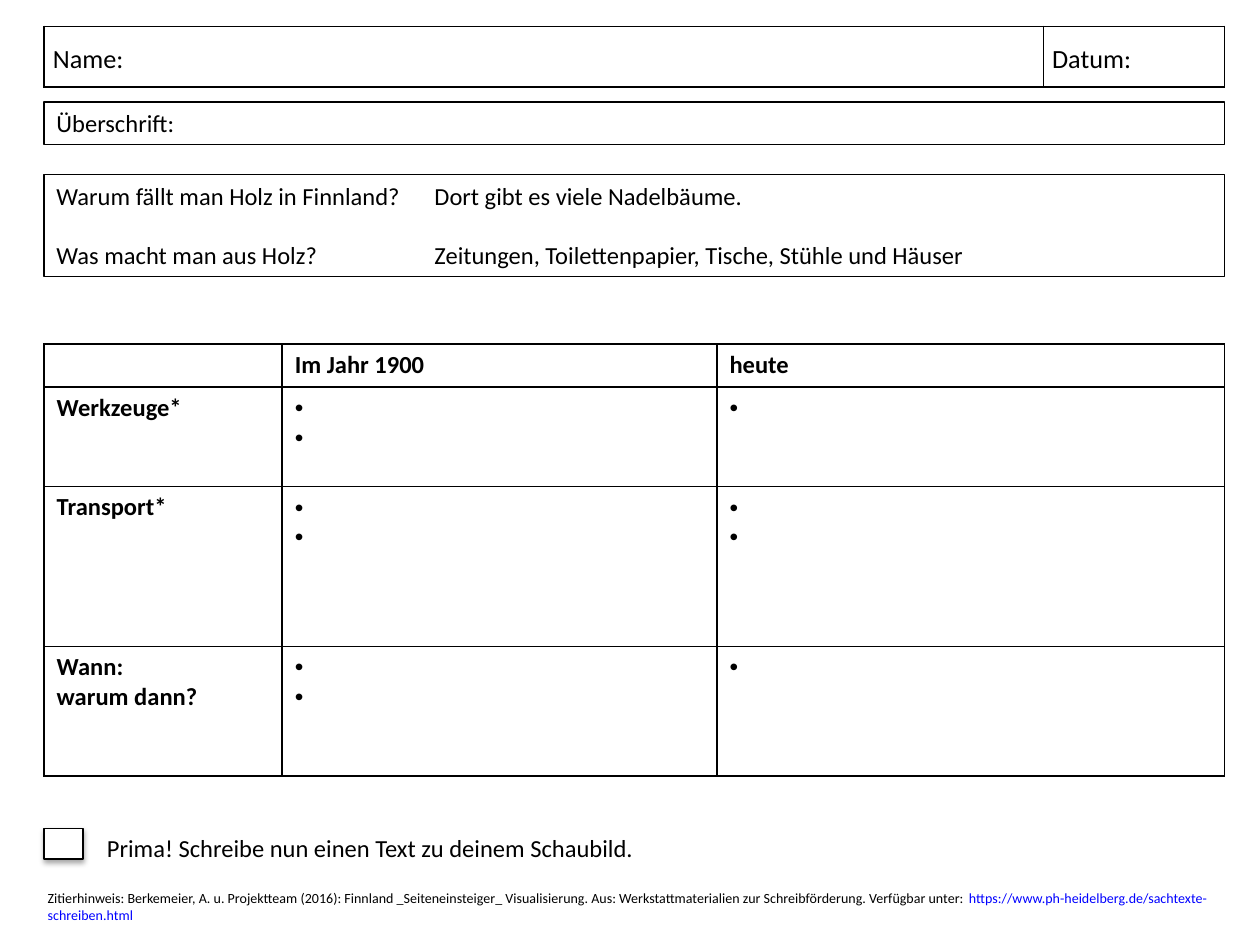
from lxml.etree import SubElement
from pptx import Presentation
from pptx.dml.color import RGBColor
from pptx.enum.shapes import MSO_SHAPE
from pptx.enum.text import MSO_ANCHOR, PP_ALIGN
from pptx.oxml.ns import qn
from pptx.util import Inches, Pt

SLIDE_WIDTH, SLIDE_HEIGHT = Inches(10), Inches(7.5)
BLACK, WHITE, BLUE = "000000", "FFFFFF", "0000FF"
LEFT, WIDTH = 0.035, 0.937  # shared column, as shares of the slide width
BULLET = "•"


def color(value):
    return RGBColor.from_string(value)


def area(left, top, width, height):
    """Turn shares of the slide into left, top, width and height."""
    return [round(share * size) for share, size in
            zip((left, top, width, height), (SLIDE_WIDTH, SLIDE_HEIGHT) * 2)]


def add_xml(parent, tag, **attributes):
    return SubElement(parent, qn(tag), {key: str(value) for key, value in attributes.items()})


def style_span(span, size=14, bold=False, ink=BLACK):
    span.font.name = "Calibri"
    span.font.size = Pt(size)
    span.font.bold = bold
    span.font.color.rgb = color(ink)


def write(frame, text, size=14, bold=False):
    frame.text = text
    frame.word_wrap = True
    for para in frame.paragraphs:
        para.alignment = PP_ALIGN.LEFT
        for span in para.runs:
            style_span(span, size, bold)


def add_box(page, place, text="", fill=None, outlined=True):
    box = page.shapes.add_shape(MSO_SHAPE.RECTANGLE, *area(*place))
    box.shadow.inherit = False
    if fill:
        box.fill.solid()
        box.fill.fore_color.rgb = color(fill)
    else:
        box.fill.background()
    if outlined:
        box.line.color.rgb = color(BLACK)
        box.line.width = Pt(0.75)
    else:
        box.line.fill.background()
    if text:
        box.text_frame.vertical_anchor = MSO_ANCHOR.TOP
        write(box.text_frame, text)
    return box


def add_soft_shadow(box):
    effects = box._element.spPr.find(qn("a:effectLst"))
    shadow = add_xml(effects, "a:outerShdw", blurRad=Pt(3.1), dist=Pt(1.8),
                     dir=90 * 60000, rotWithShape=0)
    ink = add_xml(shadow, "a:srgbClr", val=BLACK)
    add_xml(ink, "a:alpha", val=35000)


def add_borders(cell):
    properties = cell._tc.get_or_add_tcPr()
    for side in ("a:lnL", "a:lnR", "a:lnT", "a:lnB"):
        line = add_xml(properties, side, w=Pt(1))
        add_xml(add_xml(line, "a:solidFill"), "a:srgbClr", val=BLACK)


def add_grid(page, left, top, columns, rows):
    """Add a plain bordered table; columns and rows are in inches."""
    frame = page.shapes.add_table(len(rows), len(columns),
                                  *area(left, top, sum(columns) / 10, sum(rows) / 7.5))
    table = frame.table
    table.first_row = table.horz_banding = False
    for column, width in zip(table.columns, columns):
        column.width = Inches(width)
    for row, height in zip(table.rows, rows):
        row.height = Inches(height)
    for cell in table.iter_cells():
        add_borders(cell)
        cell.fill.background()
    return table


def add_bullets(cell, count):
    write(cell.text_frame, "\n".join([" "] * count))
    for para in cell.text_frame.paragraphs:
        properties = para._p.get_or_add_pPr()
        properties.set("marL", str(Inches(0.2)))
        properties.set("indent", str(-Inches(0.2)))
        add_xml(properties, "a:buFont", typeface="Arial")
        add_xml(properties, "a:buChar", char=BULLET)


def add_name_row(page):
    table = add_grid(page, LEFT, 0.028, (7.93, 0.53, 0.91), (0.48,))
    table.cell(0, 1).merge(table.cell(0, 2))
    for index, label in enumerate(("Name:", "Datum:")):
        cell = table.cell(0, index)
        cell.vertical_anchor = MSO_ANCHOR.MIDDLE
        cell.margin_left = cell.margin_right = Inches(0.07)
        cell.margin_top = cell.margin_bottom = 0
        write(cell.text_frame, label, 15)
        cell.text_frame.paragraphs[0].line_spacing = 1.15


def add_questions(page):
    box = add_box(page, (LEFT, 0.185, WIDTH, 0.108),
                  "Warum fällt man Holz in Finnland?\tDort gibt es viele Nadelbäume.\n"
                  "Was macht man aus Holz?\tZeitungen, Toilettenpapier, Tische, Stühle und Häuser")
    for para in box.text_frame.paragraphs:
        tabs = add_xml(para._p.get_or_add_pPr(), "a:tabLst")
        add_xml(tabs, "a:tab", pos=Inches(3), algn="l")
    box.text_frame.paragraphs[1].space_before = Pt(17)


def add_comparison(page):
    table = add_grid(page, LEFT, 0.364, (1.89, 3.45, 4.03), (0.34, 0.79, 1.27, 1.03))
    # A small end mark keeps the empty corner from stretching the row
    corner = table.cell(0, 0).text_frame.paragraphs[0]
    add_xml(corner._p, "a:endParaRPr", sz=1400)
    for column, heading in enumerate(("Im Jahr 1900", "heute"), 1):
        write(table.cell(0, column).text_frame, heading, bold=True)
    topics = (("Werkzeuge*", 2, 1), ("Transport*", 2, 2), ("Wann:\nwarum dann?", 2, 1))
    for row, (topic, *counts) in enumerate(topics, 1):
        write(table.cell(row, 0).text_frame, topic, bold=True)
        for column, count in enumerate(counts, 1):
            add_bullets(table.cell(row, column), count)


def add_task(page):
    task = add_box(page, (LEFT, 0.875, 0.969 - 0.004, 0.045),
                   "Prima! Schreibe nun einen Text zu deinem Schaubild.", WHITE, outlined=False)
    task.text_frame.paragraphs[0]._p.get_or_add_pPr().set("marL", str(Inches(0.4)))
    checkbox = add_box(page, (LEFT, 0.877, 0.031, 0.032), fill=WHITE)
    add_soft_shadow(checkbox)


def add_citation(page):
    box = page.shapes.add_textbox(*area(0.028, 0.935, 0.945, 0.049))
    write(box.text_frame,
          "Zitierhinweis: Berkemeier, A. u. Projektteam (2016): Finnland _Seiteneinsteiger_ "
          "Visualisierung. Aus: Werkstattmaterialien zur Schreibförderung. Verfügbar unter: ", 8)
    address = box.text_frame.paragraphs[0].add_run()
    address.text = "https://www.ph-heidelberg.de/sachtexte-schreiben.html"
    style_span(address, 8, ink=BLUE)


def main():
    deck = Presentation()
    deck.slide_width, deck.slide_height = SLIDE_WIDTH, SLIDE_HEIGHT
    page = deck.slides.add_slide(deck.slide_layouts[6])
    # Head of the worksheet
    add_box(page, (LEFT, 0.108, WIDTH, 0.045), "Überschrift:")
    add_name_row(page)
    add_questions(page)
    # Task and comparison table
    add_task(page)
    add_comparison(page)
    # Source line
    add_citation(page)
    deck.save("out.pptx")


if __name__ == "__main__":
    main()
